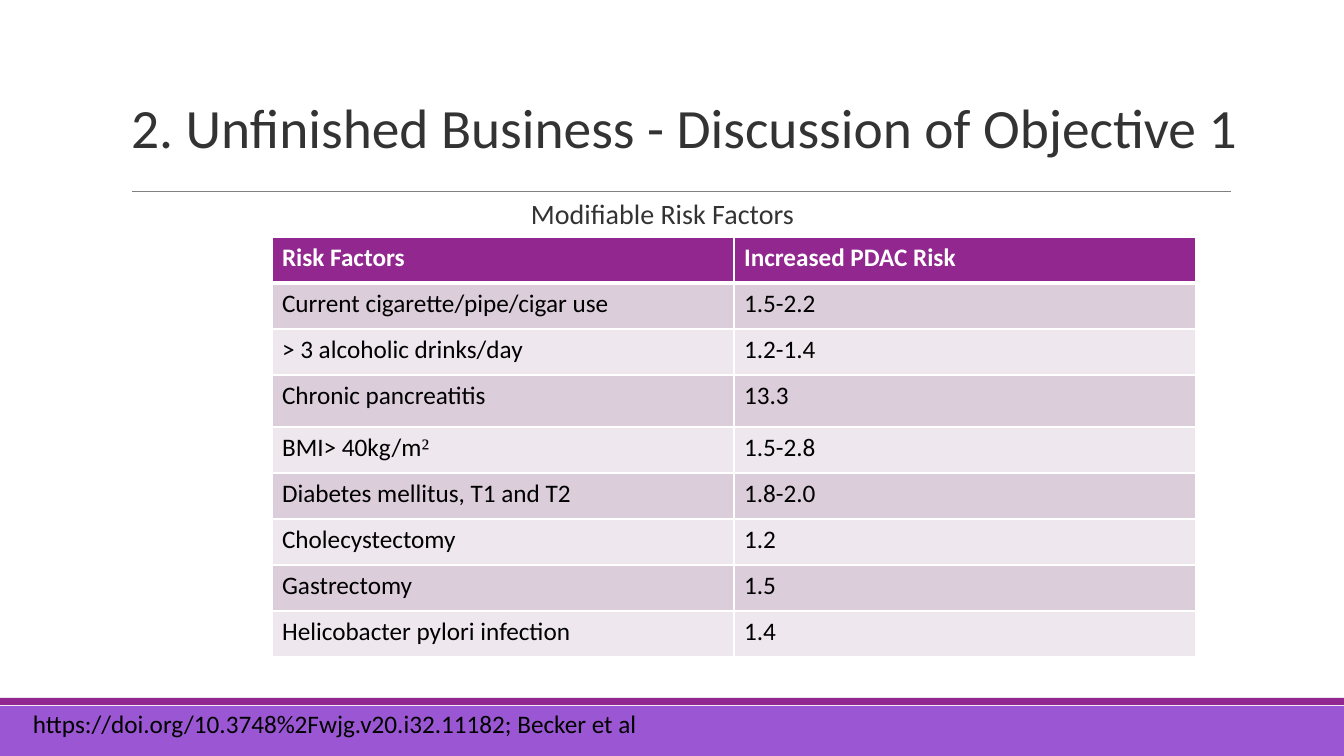
from pptx import Presentation
from pptx.dml.color import RGBColor
from pptx.enum.shapes import MSO_CONNECTOR, MSO_SHAPE
from pptx.enum.text import MSO_ANCHOR, MSO_AUTO_SIZE, PP_ALIGN
from pptx.oxml import parse_xml
from pptx.oxml.ns import nsdecls
from pptx.util import Pt

RECT, LINE = MSO_SHAPE.RECTANGLE, MSO_CONNECTOR.STRAIGHT
LEFT, BOTTOM, FIXED = PP_ALIGN.LEFT, MSO_ANCHOR.BOTTOM, MSO_AUTO_SIZE.NONE
PX = 914400 / 100.8
COLOR = {"plum": "92278F", "violet": "9B57D3", "rule": "808080",
         "text": "333333", "black": "000000", "white": "FFFFFF",
         "odd": "DCCDDB", "even": "EEE8EE"}


def px(*sizes):
    return [round(n * PX) for n in sizes]


def write(para, text, size, color, bold=False, face="Calibri"):
    run = para.add_run()
    run.text = text
    style = {"name": face, "size": Pt(size), "bold": bold}
    for key, value in style.items():
        setattr(run.font, key, value)
    run.font.color.rgb = RGBColor.from_string(COLOR[color])


deck = Presentation()
deck.slide_width, deck.slide_height = px(1344, 756)
slide = deck.slides.add_slide(deck.slide_layouts[5])
shapes = slide.shapes

# Footer bars
for top, height, color in ((706, 50, "violet"), (698, 7, "plum")):
    bar = shapes.add_shape(RECT, *px(0, top, 1344, height))
    bar.shadow.inherit = False
    bar.fill.solid()
    bar.fill.fore_color.rgb = RGBColor.from_string(COLOR[color])
    bar.line.fill.background()

# Title and the rule below it
title = shapes.title
title.left, title.top, title.width, title.height = px(121, 44, 1133, 147)
frame = title.text_frame
form = {"auto_size": FIXED, "word_wrap": True, "vertical_anchor": BOTTOM,
        "margin_bottom": px(31)[0]}
for key, value in form.items():
    setattr(frame, key, value)
head = frame.paragraphs[0]
head.alignment, head.line_spacing = LEFT, 0.85
write(head, "2. Unfinished Business - Discussion of Objective 1", 39.6, "text")

rule = shapes.add_connector(LINE, *px(132, 191, 1231, 191))
rule.line.width = Pt(0.5)
rule.line.color.rgb = RGBColor.from_string(COLOR["rule"])
rule._element.spPr.append(parse_xml(f"<a:effectLst {nsdecls('a')}/>"))

# Table heading and source line
notes = (
    ("Modifiable Risk Factors", (420, 192, 962, 44), 20, "text", 111, True),
    ("https://doi.org/10.3748%2Fwjg.v20.i32.11182; Becker et al",
     (23, 703, 631, 40), 18, "black", 10, False),
)
for text, place, size, color, inset, wrap in notes:
    frame = shapes.add_textbox(*px(*place)).text_frame
    frame.word_wrap = wrap
    frame.margin_left = px(inset)[0]
    write(frame.paragraphs[0], text, size, color)

# Table of risk factors
rows = (
    ("Risk Factors", "Increased PDAC Risk"),
    ("Current cigarette/pipe/cigar use", "1.5-2.2"),
    ("> 3 alcoholic drinks/day", "1.2-1.4"),
    ("Chronic pancreatitis", "13.3"),
    ("BMI> 40kg/m²", "1.5-2.8"),
    ("Diabetes mellitus, T1 and T2", "1.8-2.0"),
    ("Cholecystectomy", "1.2"),
    ("Gastrectomy", "1.5"),
    ("Helicobacter pylori infection", "1.4"),
)
table = shapes.add_table(len(rows), 2, *px(272, 237, 924, 420)).table
for col in table.columns:
    col.width = px(462)[0]
for i, row in enumerate(rows):
    table.rows[i].height = px(52 if i == 3 else 46)[0]
    fill = "plum" if i == 0 else "odd" if i % 2 else "even"
    for j, text in enumerate(row):
        cell = table.cell(i, j)
        # Cell borders, thicker around the header's lower edge
        props = cell._tc.get_or_add_tcPr()
        for side in "LRTB":
            thick = (i, side) in ((0, "B"), (1, "T"))
            props.append(parse_xml(
                f'<a:ln{side} {nsdecls("a")} w="{Pt(3 if thick else 1)}">'
                f'<a:solidFill><a:srgbClr val="{COLOR["white"]}"/>'
                f'</a:solidFill></a:ln{side}>'))
        cell.fill.solid()
        cell.fill.fore_color.rgb = RGBColor.from_string(COLOR[fill])
        # Text, with the power in its own font
        para = cell.text_frame.paragraphs[0]
        base, power, _ = text.partition("²")
        write(para, base, 18, "black" if i else "white", i == 0)
        if power:
            write(para, power, 18, "black", face="Times New Roman")

deck.save("out.pptx")
